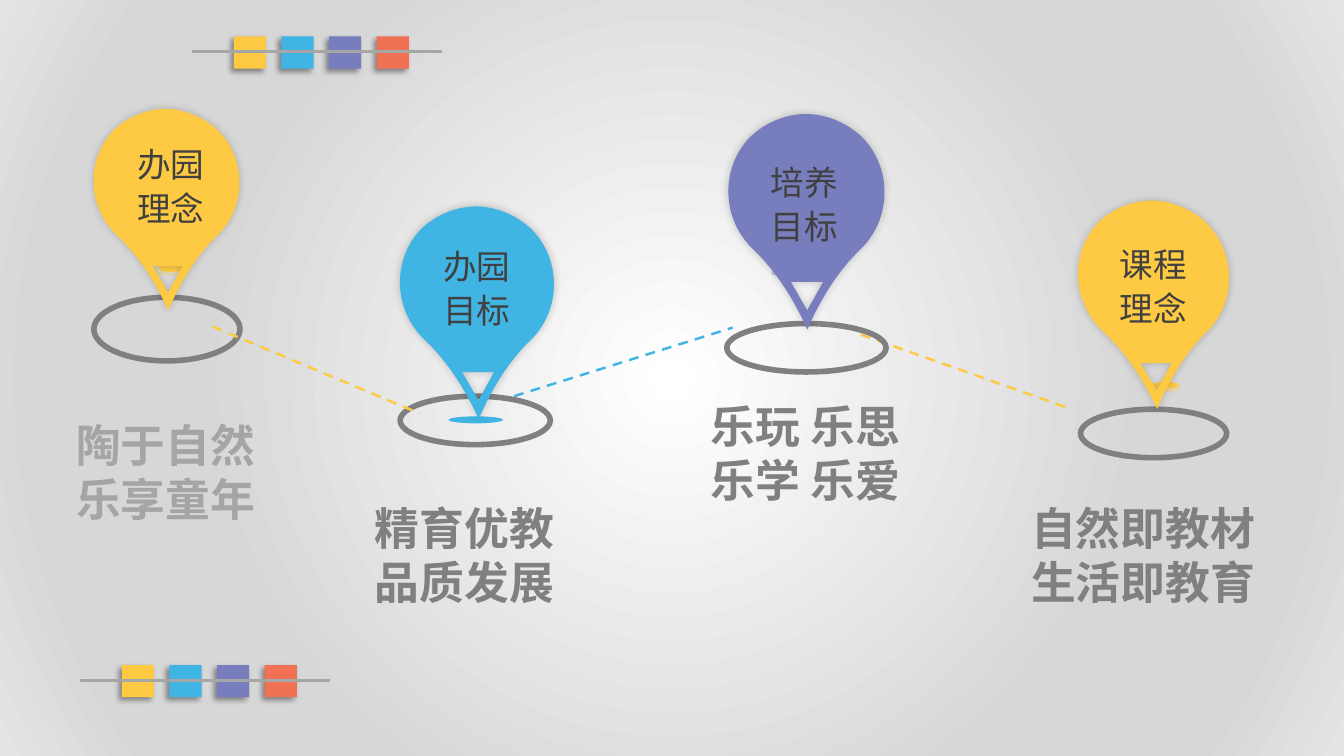
"""Builds the kindergarten vision slide: four map pins joined by dashed routes."""
import lxml.etree
import pptx
import pptx.dml.color
import pptx.enum.dml
import pptx.enum.shapes
import pptx.enum.text
import pptx.oxml.ns
import pptx.util

Pt = pptx.util.Pt
qn = pptx.oxml.ns.qn
SHAPE = pptx.enum.shapes.MSO_SHAPE
ALIGN = pptx.enum.text.PP_ALIGN

YELLOW, BLUE, PURPLE, CORAL = "FECA43", "40B4E3", "787DBD", "F17154"
GREY, RULE, PALE, DARK = "808080", "A6A6A6", "A5A5A5", "404040"

PIN_HEIGHT = 154
RIGHT_SIDE = [(0, -154), (14, -154), (29, -148), (40, -137.5), (61, -116),
              (61, -81), (40, -59), (23, -43), (10, -23), (0, 0)]
LEFT_SIDE = [(-x, y) for x, y in reversed(RIGHT_SIDE[:-1])]
OUTLINE = RIGHT_SIDE + LEFT_SIDE
WINDOW = [(-11.5, -34), (0, -13.7), (11.5, -34)]


def rgb(code):
    """Turn a hex string into a colour."""
    return pptx.dml.color.RGBColor.from_string(code)


def node(parent, tag, **attributes):
    """Append an XML element with the given attributes."""
    values = {name: str(value) for name, value in attributes.items()}
    return lxml.etree.SubElement(parent, qn(tag), values)


class VisionSlide:
    """Holds the style and the slide, with a method for each element."""

    font = "Noto Sans CJK SC"

    def __init__(self, presentation):
        """Add a blank slide."""
        self.slide = presentation.slides.add_slide(presentation.slide_layouts[6])
        self.canvas = self.slide.shapes

    def backdrop(self, stops):
        """Fill the background with a radial gradient."""
        self.slide.background.fill.gradient()
        gradient = self.slide.element.find(".//" + qn("a:gradFill"))
        for child in list(gradient):
            gradient.remove(child)
        stop_list = node(gradient, "a:gsLst")
        for position, code in stops:
            node(node(stop_list, "a:gs", pos=position * 1000), "a:srgbClr", val=code)
        circle = node(gradient, "a:path", path="circle")
        node(circle, "a:fillToRect", l=50000, t=50000, r=50000, b=50000)

    def shade(self, shape, alpha, blur, distance, angle):
        """Give a shape a soft black shadow."""
        shape.shadow.inherit = False
        effects = shape._element.spPr.find(qn("a:effectLst"))
        shadow = node(effects, "a:outerShdw", blurRad=Pt(blur), dist=Pt(distance),
                      dir=angle * 60000, algn="ctr", rotWithShape=0)
        black = node(shadow, "a:srgbClr", val="000000")
        node(black, "a:alpha", val=alpha * 1000)

    def solid(self, kind, box, code):
        """Draw a filled shape without an outline."""
        shape = self.canvas.add_shape(kind, *map(Pt, box))
        shape.shadow.inherit = False
        shape.fill.solid()
        shape.fill.fore_color.rgb = rgb(code)
        shape.line.fill.background()
        return shape

    def ring(self, box, code, width, alpha=100):
        """Draw an unfilled ellipse."""
        ellipse = self.canvas.add_shape(SHAPE.OVAL, *map(Pt, box))
        ellipse.shadow.inherit = False
        ellipse.fill.background()
        ellipse.line.color.rgb = rgb(code)
        ellipse.line.width = Pt(width)
        if alpha < 100:
            colour = ellipse._element.spPr.find(".//" + qn("a:srgbClr"))
            node(colour, "a:alpha", val=alpha * 1000)

    def line(self, start, end, code, width, dashed=False):
        """Draw a straight line, dashed on request."""
        straight = pptx.enum.shapes.MSO_CONNECTOR.STRAIGHT
        connector = self.canvas.add_connector(straight, *map(Pt, start + end))
        connector.line.color.rgb = rgb(code)
        connector.line.width = Pt(width)
        if dashed:
            connector.line.dash_style = pptx.enum.dml.MSO_LINE.DASH
        node(connector._element.spPr, "a:effectLst")

    def text(self, content, box, size, pitch, code, align, bold=False):
        """Write a block of text with a fixed line pitch."""
        frame = self.canvas.add_textbox(*map(Pt, box)).text_frame
        frame.word_wrap = True
        frame.margin_top = Pt(6)
        frame.text = content
        for paragraph in frame.paragraphs:
            paragraph.alignment = align
            paragraph.line_spacing = Pt(pitch)
            for run in paragraph.runs:
                run.font.size = Pt(size)
                run.font.bold = bold
                run.font.name = self.font
                run.font.color.rgb = rgb(code)
                node(run._r.get_or_add_rPr(), "a:ea", typeface=self.font)

    def marker(self, tip, height, lean, code):
        """Draw a curved map pin with a triangular window above its tip."""
        scale = height / PIN_HEIGHT

        def place(point):
            x, y = point
            return (100 * (tip[0] + scale * x + lean * y / PIN_HEIGHT),
                    100 * (tip[1] + scale * y))

        outline, window = list(map(place, OUTLINE)), list(map(place, WINDOW))
        builder = self.canvas.build_freeform(*outline[0], scale=Pt(1) / 100)
        builder.add_line_segments(outline[1:], close=True)
        builder.move_to(*window[0])
        builder.add_line_segments(window[1:], close=True)
        pin = builder.convert_to_shape()
        sides = list(pin._element.iter(qn("a:lnTo")))[:len(outline) - 1]
        for first in range(0, len(sides), 3):
            curve = lxml.etree.Element(qn("a:cubicBezTo"))
            sides[first].addprevious(curve)
            for side in sides[first:first + 3]:
                curve.append(side[0])
                side.getparent().remove(side)
        pin.fill.solid()
        pin.fill.fore_color.rgb = rgb(code)
        pin.line.fill.background()
        self.shade(pin, 20, 6, 0, 225)

    def stop(self, label, label_box, code, tip, height, lean, base, dot, halo):
        """Group a pin with its label and the rings on the ground."""
        self.canvas = self.slide.shapes.add_group_shape().shapes
        self.ring(base, GREY, 4)
        self.solid(SHAPE.OVAL, dot, code)
        if halo:
            self.ring(halo, code, 1, alpha=50)
        self.marker(tip, height, lean, code)
        self.text(label, label_box, 24, 31.5, DARK, ALIGN.CENTER)
        self.canvas = self.slide.shapes

    def strip(self, left, top):
        """Draw four coloured squares threaded on a double rule."""
        for index, code in enumerate((YELLOW, BLUE, PURPLE, CORAL)):
            square = self.solid(SHAPE.RECTANGLE, (left + 34 * index, top, 23, 23), code)
            self.shade(square, 40, 4, 3, 135)
        for start, end in ((-20, 149), (-29.5, 147)):
            self.line((left + start, top + 11), (left + end, top + 11), RULE, 2)


STOPS = [
    ("办园\n理念", (84.2, 94.3, 75.6, 38), YELLOW, (120.2, 221.8), 144, 2,
     (67, 212.4, 104.4, 45.4), (113, 189.4, 18.7, 5), (110.9, 189.4, 22.3, 6.5)),
    ("办园\n目标", (270.7, 167, 139.7, 38), BLUE, (342, 299.5), 152, 2,
     (285.8, 283, 107.3, 34.6), (320.4, 297.4, 38.9, 5), None),
    ("培养\n目标", (506.2, 106.6, 136.8, 38), PURPLE, (576.7, 235.4), 154, 1,
     (519.1, 231.1, 113.8, 34.6), (555.8, 191.5, 38.2, 5), (551.5, 191.5, 46, 6.5)),
    ("课程理念", (786.2, 165.6, 75.6, 38), YELLOW, (826.6, 292.3), 149, 4,
     (771.8, 292.3, 104.4, 34.6), (823, 272.9, 18.7, 5), (820.8, 272.9, 22.3, 6.5)),
]
CAPTIONS = [
    ("陶于自然\n乐享童年", (26, 292.3, 185, 85), PALE, ALIGN.CENTER),
    ("精育优教品质发展", (260.6, 351.4, 157.7, 85), GREY, ALIGN.LEFT),
    ("自然即教材\n生活即教育", (729.4, 351.4, 216.7, 124), GREY, ALIGN.LEFT),
    ("乐玩 乐思\n乐学 乐爱", (500.4, 278.6, 157.7, 85), GREY, ALIGN.LEFT),
]


def main():
    """Build and save the slide."""
    presentation = pptx.Presentation()
    presentation.slide_width, presentation.slide_height = Pt(960), Pt(540)
    vision = VisionSlide(presentation)
    vision.backdrop([(0, "FFFFFF"), (62, "D7D7D7"), (83, "D7D7D7"), (100, "E4E4E4")])
    vision.line((367.2, 283), (523.4, 234), BLUE, 1.75, dashed=True)
    vision.line((614.9, 239), (765.4, 292.3), YELLOW, 1.75, dashed=True)
    for stop in STOPS:
        vision.stop(*stop)
    vision.line((151.9, 233.3), (299.5, 295.2), YELLOW, 1.75, dashed=True)
    for content, box, code, align in CAPTIONS:
        vision.text(content, box, 32, 38.6, code, align, bold=True)
    vision.strip(87, 475)
    vision.strip(167, 26)
    presentation.save("out.pptx")


if __name__ == "__main__":
    main()
